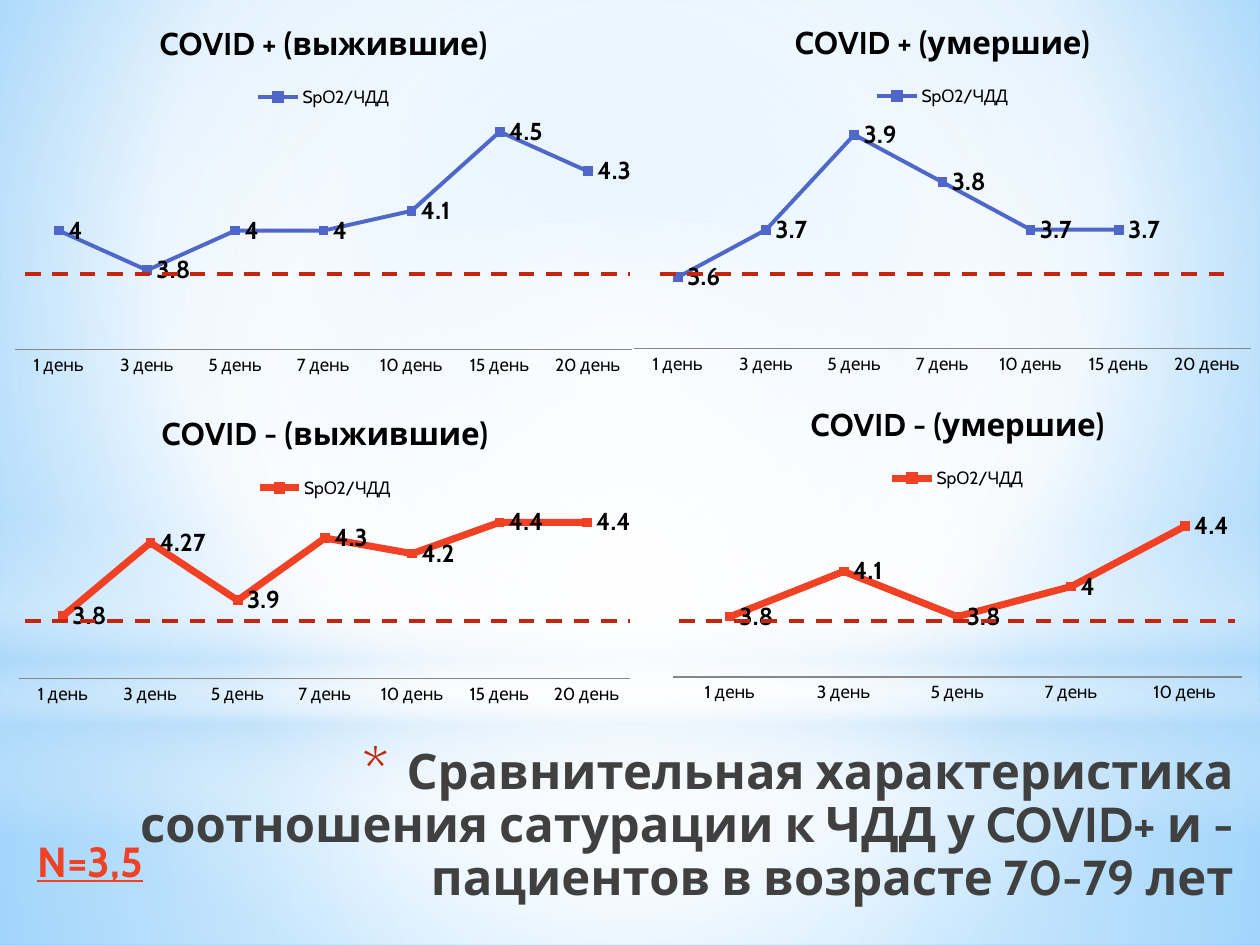
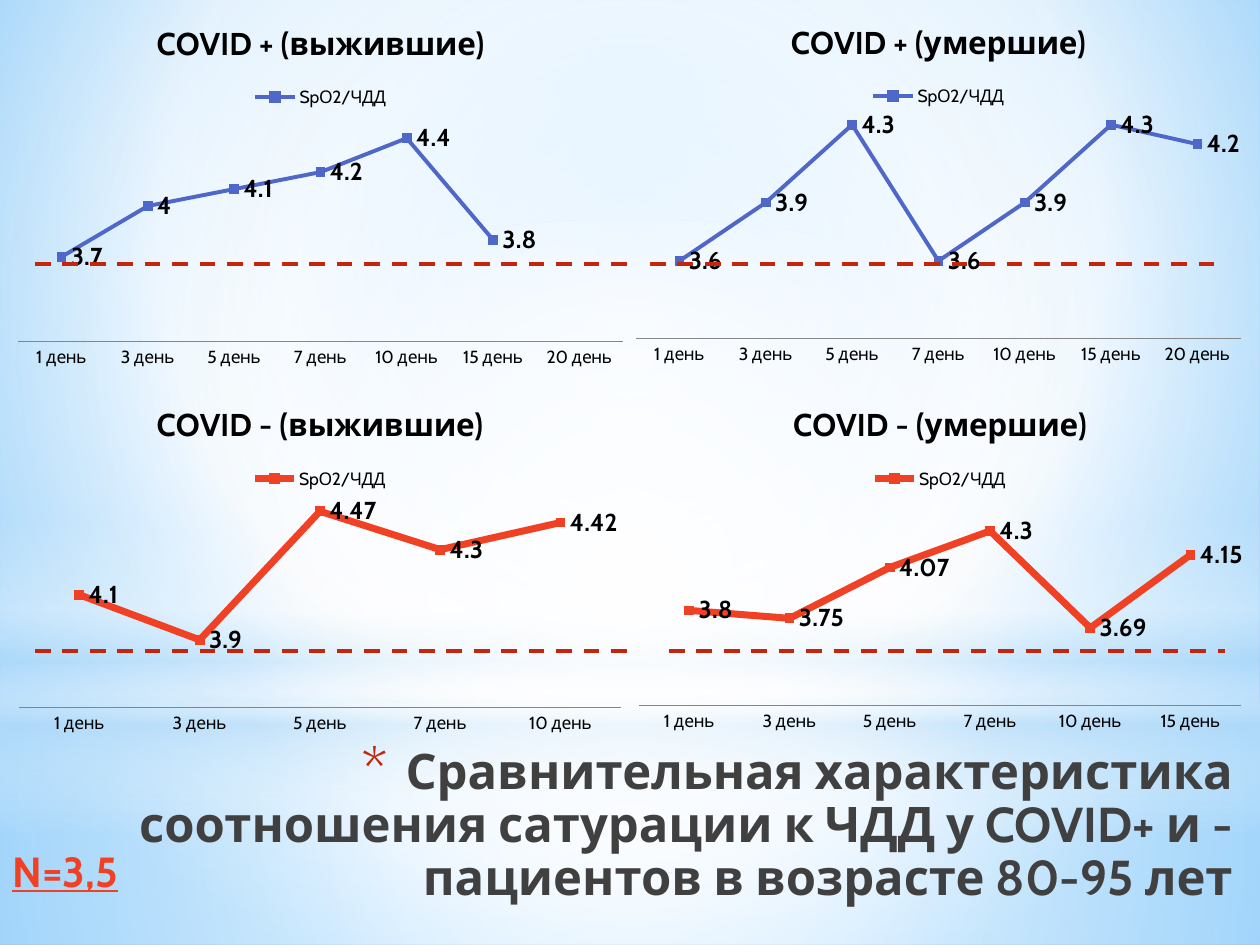
import pptx
import pptx.chart.data
import pptx.dml.color
import pptx.enum.chart
import pptx.enum.dml
import pptx.enum.shapes
import pptx.enum.text
import pptx.oxml
import pptx.oxml.ns
import pptx.util

PX = 914400 / 126  # one px in EMU
FONT = "Cabin"
RED, BLUE, ORANGE = "C3260C", "4E67C8", "F14124"
NS = pptx.oxml.ns.nsdecls("a", "p", "c")
DAYS = ["1 день", "3 день", "5 день", "7 день", "10 день", "15 день", "20 день"]
TITLE = "Сравнительная характеристика соотношения сатурации к ЧДД у COVID+ и - пациентов в возрасте "


def rgb(value):
    return pptx.dml.color.RGBColor.from_string(value)


def gradient(stops, direction):
    """Gradient fill from (position, colour, opacity) stops, all in percent."""
    gs = "".join(
        f'<a:gs pos="{pos * 1000}"><a:srgbClr val="{color}"><a:alpha val="{alpha * 1000}"/></a:srgbClr></a:gs>'
        for pos, color, alpha in stops)
    return pptx.oxml.parse_xml(
        f'<a:gradFill {NS} rotWithShape="1"><a:gsLst>{gs}</a:gsLst>{direction}</a:gradFill>')


CIRCLE = '<a:path path="circle"><a:fillToRect l="{}" t="{}" r="{}" b="{}"/></a:path>'
CENTRE = CIRCLE.format(50000, 50000, 50000, 50000)
DOWN = '<a:lin ang="5400000" scaled="0"/>'
RECT = pptx.enum.shapes.MSO_SHAPE.RECTANGLE
OVAL = pptx.enum.shapes.MSO_SHAPE.OVAL

# Soft bands behind every slide: shape, top, height, stops, direction
BANDS = [
    (RECT, 703, 242, [(0, "FFFFFF", 91), (37, "FFFFFF", 76), (100, "B4DCFA", 79)], CENTRE),
    (RECT, 0, 703, [(0, "FFFFFF", 89), (48, "FFFFFF", 62), (100, "B4DCFA", 79)], CENTRE),
    (RECT, 519, 315, [(0, "FFFFFF", 0), (29, "FFFFFF", 30), (45, "B4DCFA", 40),
                      (55, "FFFFFF", 26), (65, "B4DCFA", 60), (100, "FFFFFF", 0)], DOWN),
    (OVAL, 220, 703, [(0, "FFFFFF", 100), (56, "FFFFFF", 0)], CENTRE),
]

# Charts: box, plot area as fractions, axis range, values
# Thresholds: left, right, y
SLIDES = [
    {"ages": "70-79 лет", "title": (25, 741, 1221, 179), "norm": (25, 829, 198, 63),
     "charts": [
         ((2, 1, 643, 383), (0.02, 0.29, 0.96, 0.62), (3.4, 4.6), [4, 3.8, 4, 4, 4.1, 4.5, 4.3]),
         ((621, 0, 643, 383), (0.02, 0.29, 0.96, 0.62), (3.45, 3.95), [3.6, 3.7, 3.9, 3.8, 3.7, 3.7, None]),
         ((0, 393, 650, 328), (0.03, 0.3, 0.94, 0.57), (3.4, 4.6), [3.8, 4.27, 3.9, 4.3, 4.2, 4.4, 4.4]),
         ((655, 383, 605, 338), (0.03, 0.335, 0.94, 0.535), (3.4, 4.6), [3.8, 4.1, 3.8, 4, 4.4])],
     "thresholds": [(25, 630, 274), (660, 1235, 274), (25, 630, 621), (679, 1235, 621)]},
    {"ages": "80-95 лет", "title": (44, 741, 1201, 179), "norm": (0, 839, 233, 63),
     "charts": [
         ((-1, 1, 643, 383), (0.03, 0.27, 0.94, 0.62), (3.2, 4.6), [3.7, 4, 4.1, 4.2, 4.4, 3.8, None]),
         ((617, 0, 643, 383), (0.03, 0.275, 0.94, 0.61), (3.2, 4.4), [3.6, 3.9, 4.3, 3.6, 3.9, 4.3, 4.2]),
         ((0, 383, 640, 367), (0.03, 0.27, 0.94, 0.615), (3.6, 4.6), [4.1, 3.9, 4.47, 4.3, 4.42]),
         ((620, 383, 640, 367), (0.03, 0.36, 0.94, 0.52), (3.2, 4.4), [3.8, 3.75, 4.07, 4.3, 3.69, 4.15])],
     "thresholds": [(35, 630, 264), (650, 1225, 264), (35, 630, 651), (669, 1225, 651)]},
]

# Group title, line colour and line width, in chart order
GROUPS = [
    ("COVID + (выжившие)", BLUE, 2.25),
    ("COVID + (умершие)", BLUE, 2.25),
    ("COVID - (выжившие)", ORANGE, 4),
    ("COVID - (умершие)", ORANGE, 4),
]

prs = pptx.Presentation()
prs.slide_width = round(1260 * PX)
prs.slide_height = round(945 * PX)

for page in SLIDES:
    s = prs.slides.add_slide(prs.slide_layouts[6])

    # Background
    bg = s.background.fill
    bg.solid()
    bg_pr = s.element.find(".//" + pptx.oxml.ns.qn("p:bgPr"))
    bg_pr.replace(bg_pr[0], gradient(
        [(0, "9ED5FF", 100), (60, "FFFFFF", 100), (100, "5BB9FF", 100)],
        CIRCLE.format(20000, 10000, 20000, 60000)))

    # Bands
    for kind, top, height, stops, direction in BANDS:
        sp = s.shapes.add_shape(kind, 0, round(top * PX), prs.slide_width, round(height * PX))
        sp.shadow.inherit = False
        sp.line.fill.background()
        sp.fill.solid()
        solid = sp.element.spPr.find(pptx.oxml.ns.qn("a:solidFill"))
        sp.element.spPr.replace(solid, gradient(stops, direction))

    # Title and norm value
    for box, text, size, color in [(page["title"], TITLE + page["ages"], 28, "404040"),
                                   (page["norm"], "N=3,5", 24, ORANGE)]:
        sp = s.shapes.add_textbox(*[round(v * PX) for v in box])
        tf = sp.text_frame
        tf.word_wrap = True
        p = tf.paragraphs[0]
        r = p.add_run()
        r.text = text
        r.font.name = FONT
        r.font.size = pptx.util.Pt(size)
        r.font.bold = True
        r.font.color.rgb = rgb(color)
        if box == page["title"]:
            p.alignment = pptx.enum.text.PP_ALIGN.RIGHT
            p.line_spacing = 0.9
            ppr = p._p.get_or_add_pPr()
            ppr.set("marL", "320040")
            ppr.set("indent", "-320040")
            for xml in (f'<a:buClr {NS}><a:srgbClr val="{RED}"/></a:buClr>',
                        f'<a:buSzPct {NS} val="128000"/>',
                        f'<a:buFont {NS} typeface="{FONT}"/>',
                        f'<a:buChar {NS} char="*"/>'):
                ppr.append(pptx.oxml.parse_xml(xml))
        else:
            r.font.underline = True

    # Line charts
    for (box, area, limits, values), (name, color, width) in zip(page["charts"], GROUPS):
        data = pptx.chart.data.CategoryChartData()
        data.categories = DAYS[:len(values)]
        data.add_series("SpО2/ЧДД", values)
        chart = s.shapes.add_chart(pptx.enum.chart.XL_CHART_TYPE.LINE_MARKERS,
                                   *[round(v * PX) for v in box], data).chart
        chart.font.name = FONT
        chart.font.size = pptx.util.Pt(10)
        chart.font.color.rgb = rgb("000000")

        chart.has_title = True
        r = chart.chart_title.text_frame.paragraphs[0].add_run()
        r.text = name
        r.font.name = FONT
        r.font.size = pptx.util.Pt(18)
        r.font.bold = True
        r.font.color.rgb = rgb("000000")
        chart.has_legend = True
        chart.legend.position = pptx.enum.chart.XL_LEGEND_POSITION.TOP
        chart.legend.include_in_layout = False

        chart.value_axis.minimum_scale, chart.value_axis.maximum_scale = limits
        chart.value_axis.has_major_gridlines = False
        chart.value_axis.visible = False
        axis = chart.category_axis
        axis.major_tick_mark = pptx.enum.chart.XL_TICK_MARK.NONE
        axis.format.line.color.rgb = rgb("868686")
        axis.format.line.width = pptx.util.Pt(0.75)

        plot = chart.plots[0]
        plot.vary_by_categories = False
        plot.has_data_labels = True
        labels = plot.data_labels
        labels.show_value = True
        labels.position = pptx.enum.chart.XL_LABEL_POSITION.RIGHT
        labels.font.name = FONT
        labels.font.size = pptx.util.Pt(14)
        labels.font.bold = True
        labels.font.color.rgb = rgb("000000")
        series = plot.series[0]
        series.smooth = False
        series.format.line.color.rgb = rgb(color)
        series.format.line.width = pptx.util.Pt(width)
        series.marker.style = pptx.enum.chart.XL_MARKER_STYLE.SQUARE
        series.marker.size = 5
        series.marker.format.fill.solid()
        series.marker.format.fill.fore_color.rgb = rgb(color)
        series.marker.format.line.color.rgb = rgb(color)

        # Fixed inner plot area
        plot_area = chart._chartSpace.chart.plotArea
        for layout in plot_area.findall(pptx.oxml.ns.qn("c:layout")):
            plot_area.remove(layout)
        x, y, w, h = area
        plot_area.insert(0, pptx.oxml.parse_xml(
            f'<c:layout {NS}><c:manualLayout><c:layoutTarget val="inner"/>'
            f'<c:xMode val="edge"/><c:yMode val="edge"/><c:x val="{x}"/><c:y val="{y}"/>'
            f'<c:w val="{w}"/><c:h val="{h}"/></c:manualLayout></c:layout>'))

    # Dashed threshold lines
    for left, right, y in page["thresholds"]:
        line = s.shapes.add_connector(pptx.enum.shapes.MSO_CONNECTOR.STRAIGHT,
                                      *[round(v * PX) for v in (left, y, right, y)])
        line.line.color.rgb = rgb(RED)
        line.line.width = pptx.util.Pt(2.25)
        line.line.dash_style = pptx.enum.dml.MSO_LINE.DASH
        line._element.spPr.append(pptx.oxml.parse_xml(f"<a:effectLst {NS}/>"))

prs.save("out.pptx")
